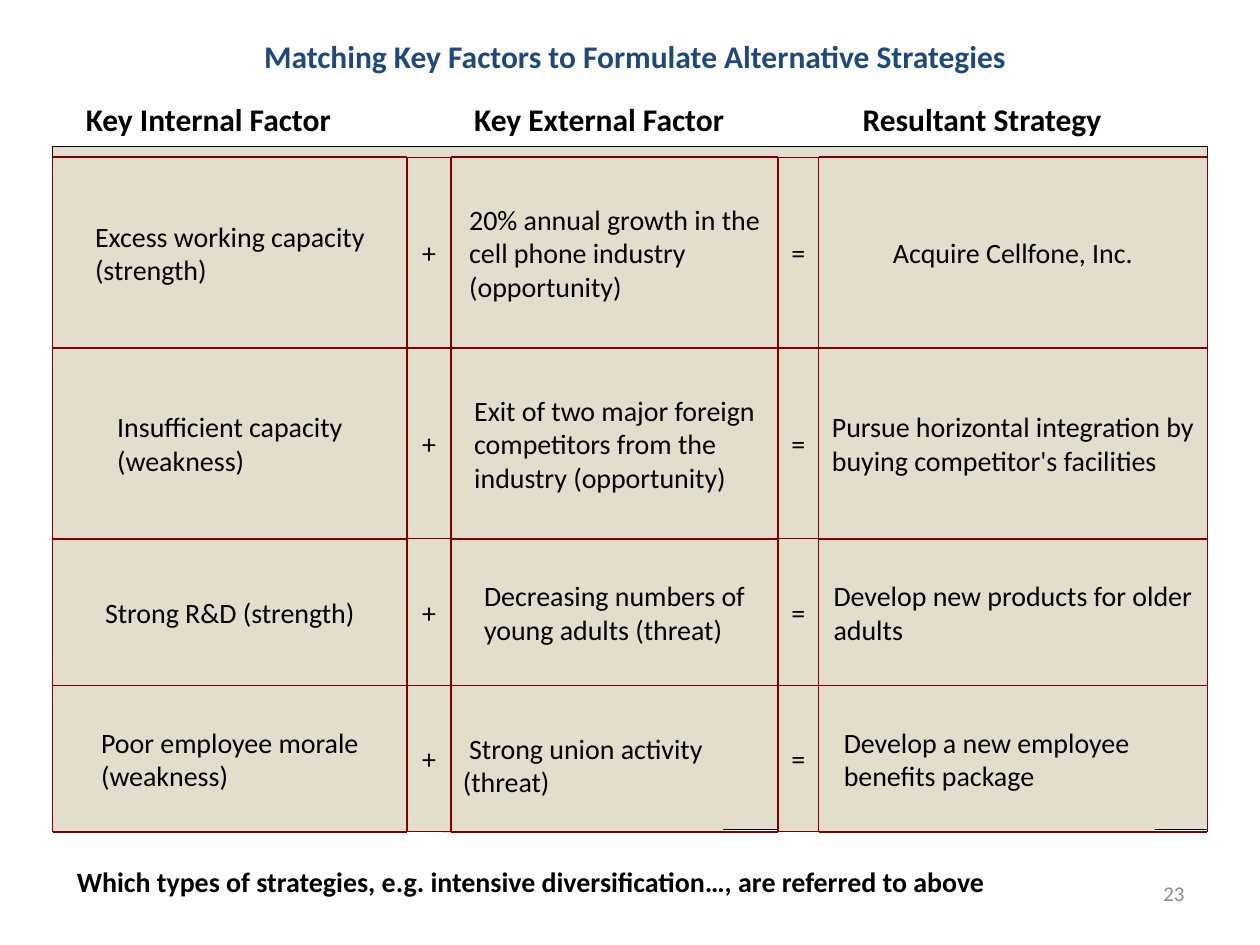
import pptx
import pptx.dml.color
import pptx.enum.shapes
import pptx.enum.text
import pptx.oxml
import pptx.oxml.ns
import pptx.util
from pptx.util import Cm

ALIGN = pptx.enum.text.PP_ALIGN
ANCHOR = pptx.enum.text.MSO_ANCHOR

BLACK, NAVY, GRAY = "000000", "1F497D", "8C8C8C"
SAND, MAROON = "E3DDCB", "800000"


def color(value):
    return pptx.dml.color.RGBColor.from_string(value)


class SlideBuilder:
    """Holds the text style and the slide being filled; lengths are in cm."""

    font = "Calibri"

    def __init__(self, slide):
        self.shapes = slide.shapes

    def set_text(self, shape, text, size, ink=BLACK, bold=False,
                 align=ALIGN.LEFT, anchor=ANCHOR.TOP):
        frame = shape.text_frame
        frame.word_wrap = True
        frame.vertical_anchor = anchor
        frame.text = text
        para = frame.paragraphs[0]
        para.alignment = align
        for span in para.runs:
            span.font.name = self.font
            span.font.size = pptx.util.Pt(size)
            span.font.bold = bold
            span.font.color.rgb = color(ink)

    def text(self, left, top, width, height, text, size, **style):
        box = self.shapes.add_textbox(Cm(left), Cm(top), Cm(width), Cm(height))
        self.set_text(box, text, size, **style)

    def panel(self, left, top, right, bottom, outline=None):
        panel = self.shapes.add_shape(
            pptx.enum.shapes.MSO_SHAPE.RECTANGLE,
            Cm(left), Cm(top), Cm(right - left), Cm(bottom - top))
        panel.shadow.inherit = False
        panel.fill.solid()
        panel.fill.fore_color.rgb = color(SAND)
        if outline:
            panel.line.color.rgb = color(outline)
            panel.line.width = pptx.util.Pt(0.75)
        else:
            panel.line.fill.background()
        return panel

    def cell(self, left, top, right, bottom, text, outline):
        cell = self.panel(left, top, right, bottom, outline)
        self.set_text(cell, text, 16, anchor=ANCHOR.MIDDLE)
        # Centre the left-aligned text block within the cell
        body = cell.element.find(".//" + pptx.oxml.ns.qn("a:bodyPr"))
        body.set("anchorCtr", "1")

    def line(self, x1, y1, x2, y2):
        line = self.shapes.add_connector(
            pptx.enum.shapes.MSO_CONNECTOR.STRAIGHT,
            Cm(x1), Cm(y1), Cm(x2), Cm(y2))
        line.line.color.rgb = color(MAROON)
        line.line.width = pptx.util.Pt(1)
        effects = pptx.oxml.ns.qn("a:effectLst")
        line.element.spPr.append(line.element.spPr.makeelement(effects))


# Grid edges
COLUMNS = [1.06, 8.21, 9.09, 15.69, 16.5, 24.34]
ROWS = [3.17, 7.02, 10.86, 13.82, 16.77]

STRATEGIES = [
    ("Excess working capacity (strength)",
     "20% annual growth in the cell phone industry (opportunity)",
     "Acquire Cellfone, Inc."),
    ("Insufficient capacity (weakness)",
     "Exit of two major foreign competitors from the industry (opportunity)",
     "Pursue horizontal integration by buying competitor's facilities"),
    ("Strong R&D (strength)",
     "Decreasing numbers of young adults (threat)",
     "Develop new products for older adults"),
    ("Poor employee morale (weakness)",
     " Strong union activity (threat)",
     "Develop a new employee benefits package"),
]
LAST_ROW = len(STRATEGIES) - 1

# Cells of the last row that do not fill their grid space
ODD_CELLS = {(LAST_ROW, 2): (8.92, 14.04, 14.58, 16.79),
             (LAST_ROW, 4): (16.5, 13.82, 23.28, 16.77)}


def main():
    deck = pptx.Presentation()
    deck.slide_width, deck.slide_height = Cm(25.4), Cm(19.05)
    page = SlideBuilder(deck.slides.add_slide(deck.slide_layouts[6]))

    # Page number and backdrop
    page.text(18.2, 17.35, 5.93, 1.32, "23", 12, ink=GRAY,
              align=ALIGN.RIGHT, anchor=ANCHOR.MIDDLE)
    page.panel(1.06, 2.96, 24.34, 16.73, BLACK)

    # Cells, laid from the bottom right so that left ones overlap right ones
    for row in reversed(range(len(STRATEGIES))):
        internal, external, result = STRATEGIES[row]
        texts = [internal, "+", external, "=", result]
        for column in reversed(range(len(texts))):
            area = ODD_CELLS.get((row, column), (
                COLUMNS[column], ROWS[row], COLUMNS[column + 1], ROWS[row + 1]))
            plain = row == LAST_ROW and column % 2 == 0
            page.cell(*area, texts[column], None if plain else MAROON)

    # Rules: horizontal ones skip the operator columns
    for column in (0, 2, 4):
        for index, y in enumerate(ROWS):
            if (column, index) != (2, LAST_ROW):
                page.line(COLUMNS[column], y, COLUMNS[column + 1], y)
    for x in COLUMNS:
        page.line(x, ROWS[0], x, ROWS[-1])

    # Headings, title and question
    headings = ["Key Internal Factor", "Key External Factor",
                "Resultant Strategy"]
    for index, heading in enumerate(headings):
        page.text(1.48 + 7.83 * index, 1.9, 6.56, 1.02, heading, 18, bold=True)
    page.text(3.81, 0.63, 17.99, 1.02,
              "Matching Key Factors to Formulate Alternative Strategies", 18,
              ink=NAVY, bold=True, align=ALIGN.CENTER)
    page.text(1.3, 17.3, 22.8, 0.94,
              "Which types of strategies, e.g. intensive diversification…, "
              "are referred to above", 16, bold=True)

    deck.save("out.pptx")


if __name__ == "__main__":
    main()
